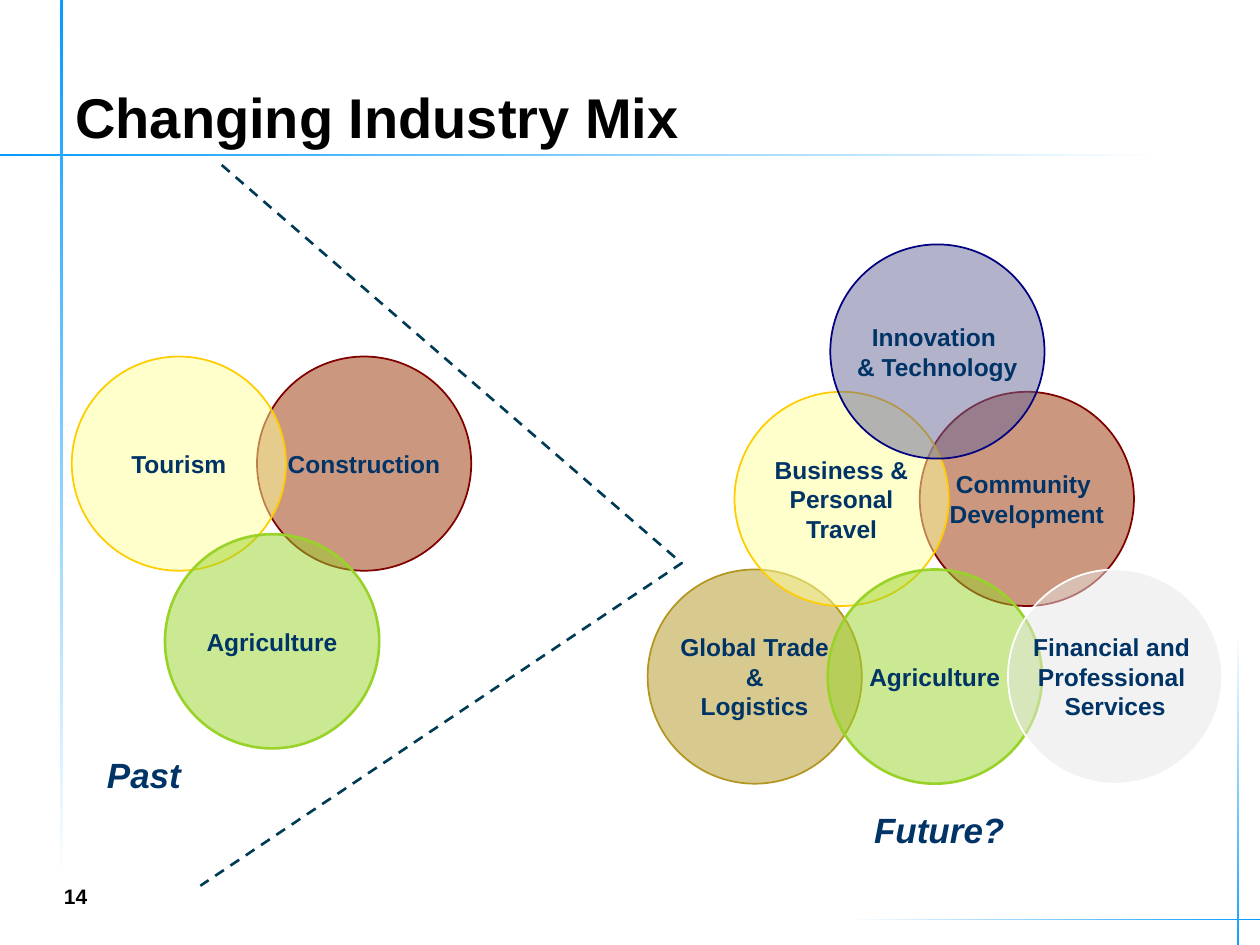
"""Build the Changing Industry Mix slide."""
from lxml.etree import SubElement
from pptx import Presentation
from pptx.dml.color import RGBColor
from pptx.enum.dml import MSO_LINE
from pptx.enum.shapes import MSO_SHAPE
from pptx.enum.text import MSO_ANCHOR, PP_ALIGN
from pptx.oxml.ns import qn
from pptx.util import Inches, Pt

NAVY = "003366"
BLACK = "000000"


def set_color(target, color):
    target.rgb = RGBColor.from_string(color)


def write_text(shape, text, size=14, color=NAVY, italic=False, align=PP_ALIGN.LEFT,
               anchor=MSO_ANCHOR.TOP, wrap=True):
    frame = shape.text_frame
    frame.word_wrap = wrap
    frame.vertical_anchor = anchor
    paragraph = frame.paragraphs[0]
    paragraph.text = text
    paragraph.alignment = align
    for font in [paragraph.font] + [run.font for run in paragraph.runs]:
        font.name = "Arial"
        font.size = Pt(size)
        font.bold = True
        font.italic = italic
        set_color(font.color, color)


presentation = Presentation()
presentation.slide_width = Inches(10)
presentation.slide_height = Inches(7.5)
slide = presentation.slides.add_slide(presentation.slide_layouts[6])
shapes = slide.shapes

rules = [
    (4.52, -3.47, 0.02, 9.4, 270),
    (0.48, -0.09, 0.02, 7.07, 0),
    (8.38, 5.62, 0.01, 3.35, 90),
    (9.82, 5.04, 0.01, 2.64, 180),
]
for left, top, width, height, rotation in rules:
    rule = shapes.add_shape(MSO_SHAPE.RECTANGLE, Inches(left), Inches(top),
                            Inches(width), Inches(height))
    rule.shadow.inherit = False
    rule.rotation = rotation
    rule.line.fill.background()
    rule.fill.gradient()
    rule.fill.gradient_angle = 270
    for stop, color in zip(rule.fill.gradient_stops, ("0099FF", "FFFFFF")):
        set_color(stop.color, color)

arrow_builder = shapes.build_freeform(Inches(1.76), Inches(1.31))
arrow_builder.add_line_segments(
    [(Inches(5.41), Inches(4.47)), (Inches(1.59), Inches(7.03))], close=False)
arrow = arrow_builder.convert_to_shape()
arrow.shadow.inherit = False
arrow.fill.background()
set_color(arrow.line.color, "003B55")
arrow.line.width = Pt(1.5)
arrow.line.dash_style = MSO_LINE.DASH

circles = [
    ("Global Trade\n & \nLogistics", 5.14, 4.52, "B29620", "B29620", 1),
    ("Construction", 2.04, 2.83, "993300", "800000", 1),
    ("Tourism", 0.57, 2.83, "FFFF99", "FFCC00", 1),
    ("Agriculture", 1.31, 4.24, "99D329", "99D329", 1.5),
    ("Community \nDevelopment", 7.3, 3.11, "993300", "800000", 1),
    ("Business &\nPersonal\nTravel", 5.83, 3.11, "FFFF99", "FFCC00", 1),
    ("Agriculture", 6.57, 4.52, "99D329", "99D329", 1.5),
    ("Innovation \n& Technology", 6.59, 1.94, "666699", "000080", 1),
    ("Financial and \nProfessional \nServices", 8, 4.52, "E6E6E6", "FFFFFF", 1),
]
for text, left, top, fill_color, line_color, line_width in circles:
    circle = shapes.add_shape(MSO_SHAPE.OVAL, Inches(left), Inches(top),
                              Inches(1.7), Inches(1.7))
    circle.shadow.inherit = False
    circle.fill.solid()
    set_color(circle.fill.fore_color, fill_color)
    fill_element = circle._element.spPr.find(qn("a:solidFill"))
    SubElement(fill_element[0], qn("a:alpha"), val="50000")
    set_color(circle.line.color, line_color)
    circle.line.width = Pt(line_width)
    write_text(circle, text, align=PP_ALIGN.CENTER, anchor=MSO_ANCHOR.MIDDLE, wrap=False)

labels = [
    ("Changing Industry Mix", 0.5, -0.01, 9, 1.25,
     {"size": 32, "color": BLACK, "anchor": MSO_ANCHOR.BOTTOM}),
    ("Past", 0.75, 5.93, 1.15, 0.4, {"size": 20, "italic": True}),
    ("Future?", 6.71, 6.37, 1.49, 0.44,
     {"size": 20, "italic": True, "align": PP_ALIGN.CENTER}),
    ("14", 0.41, 6.91, 0.73, 0.4,
     {"size": 12, "color": BLACK, "anchor": MSO_ANCHOR.MIDDLE}),
]
for text, left, top, width, height, text_format in labels:
    label = shapes.add_textbox(Inches(left), Inches(top), Inches(width), Inches(height))
    write_text(label, text, **text_format)

presentation.save("out.pptx")
